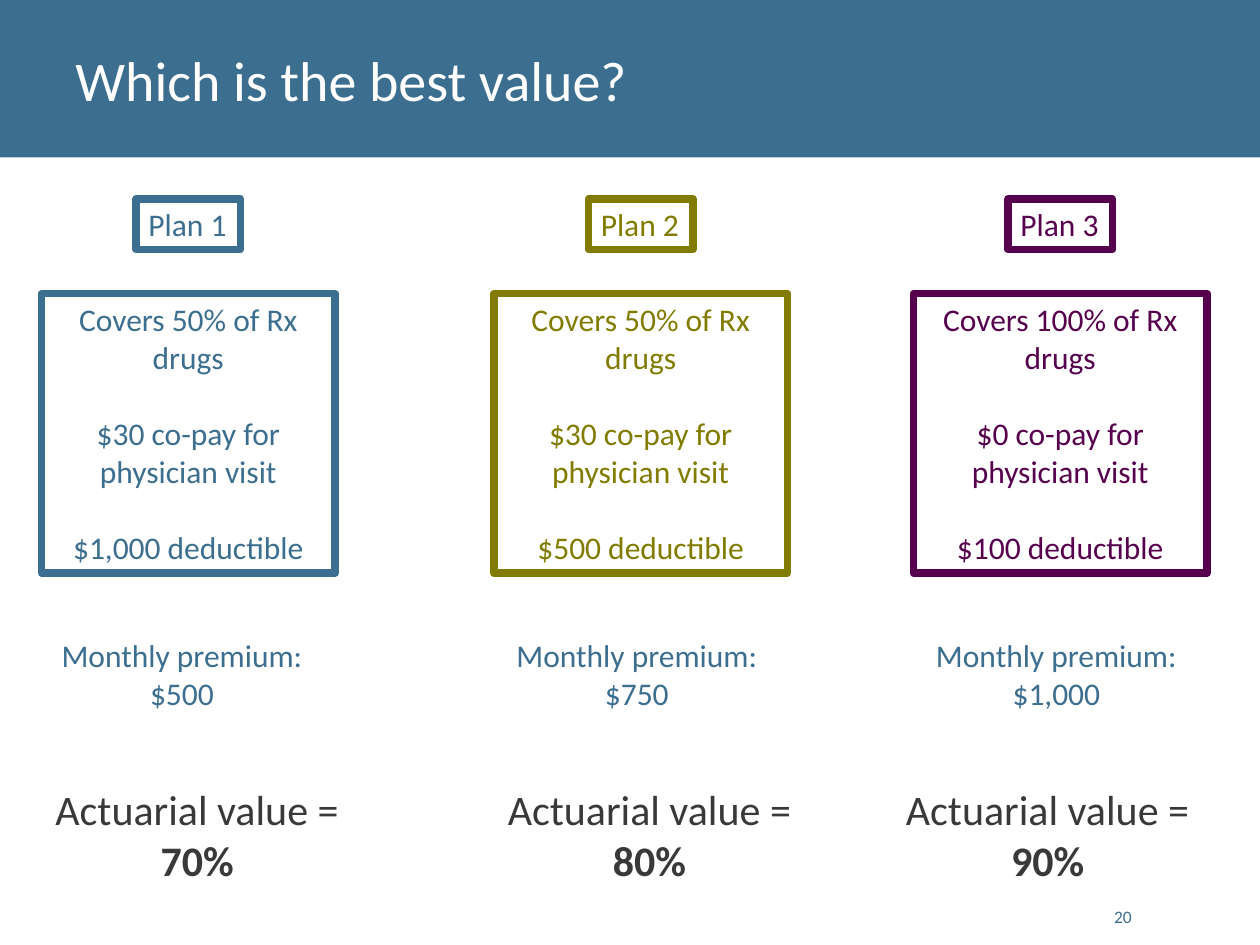
from dataclasses import dataclass

import pptx
import pptx.dml.color
import pptx.enum.shapes
import pptx.enum.text
import pptx.util

Inches = pptx.util.Inches
Pt = pptx.util.Pt
Align = pptx.enum.text.PP_ALIGN
Anchor = pptx.enum.text.MSO_ANCHOR
RECTANGLE = pptx.enum.shapes.MSO_SHAPE.RECTANGLE

COLOURS = {
    "blue": "3B6E8F",
    "olive": "817C00",
    "purple": "56004E",
    "grey": "38393A",
    "white": "FFFFFF",
}


@dataclass
class Line:
    text: str
    align: Align = Align.CENTER
    bold: bool = False


@dataclass
class Plan:
    name: str
    colour: str
    box_left: float
    premium_left: float
    value_left: float
    benefits: tuple[str, ...]
    premium: str
    value: str


PLANS = [
    Plan("Plan 1", "blue", 0.33, 0.39, 0.33,
         ("Covers 50% of Rx drugs", "$30 co-pay for physician visit", "$1,000 deductible"),
         "$500", "70%"),
    Plan("Plan 2", "olive", 3.92, 4, 3.92,
         ("Covers 50% of Rx drugs", "$30 co-pay for physician visit", "$500 deductible"),
         "$750", "80%"),
    Plan("Plan 3", "purple", 7.25, 7.33, 7.08,
         ("Covers 100% of Rx drugs", "$0 co-pay for physician visit", "$100 deductible"),
         "$1,000", "90%"),
]


def rgb(colour: str) -> pptx.dml.color.RGBColor:
    return pptx.dml.color.RGBColor.from_string(COLOURS[colour])


def write(shape, lines: list[Line], size: float, colour: str, wrap: bool = False,
          anchor: Anchor = Anchor.TOP, gap: float = 0) -> None:
    frame = shape.text_frame
    frame.word_wrap = wrap
    frame.vertical_anchor = anchor
    for index, line in enumerate(lines):
        para = frame.add_paragraph() if index else frame.paragraphs[0]
        para.text = line.text
        para.alignment = line.align
        para.space_before = Pt(gap if index else 0)
        para.font.name = "Calibri"
        para.font.size = Pt(size)
        para.font.bold = line.bold
        para.font.color.rgb = rgb(colour)


def add_text(page, left: float, top: float, width: float, height: float):
    return page.shapes.add_textbox(Inches(left), Inches(top), Inches(width), Inches(height))


def add_rectangle(page, left: float, top: float, width: float, height: float,
                  fill: str, outline: str | None = None):
    box = page.shapes.add_shape(RECTANGLE, Inches(left), Inches(top),
                                Inches(width), Inches(height))
    box.shadow.inherit = False
    box.fill.solid()
    box.fill.fore_color.rgb = rgb(fill)
    if outline:
        box.line.color.rgb = rgb(outline)
        box.line.width = Pt(4.33)
    else:
        box.line.fill.background()
    return box


def add_plan(page, plan: Plan) -> None:
    label = add_rectangle(page, plan.box_left + 0.75, 1.58, 0.83, 0.4, "white", plan.colour)
    write(label, [Line(plan.name, Align.LEFT)], 18, plan.colour)

    details = add_rectangle(page, plan.box_left, 2.33, 2.33, 2.22, "white", plan.colour)
    write(details, [Line(benefit) for benefit in plan.benefits], 18, plan.colour,
          wrap=True, gap=22)

    premium = add_text(page, plan.premium_left, 5, 2.19, 0.71)
    write(premium, [Line("Monthly premium:", Align.LEFT), Line(plan.premium)], 18, "blue")

    value = add_text(page, plan.value_left, 6.17, 2.47, 0.91)
    write(value, [Line("Actuarial value ="), Line(plan.value, bold=True)], 24, "grey")


def main() -> None:
    deck = pptx.Presentation()
    deck.slide_width = Inches(10)
    deck.slide_height = Inches(7.5)
    page = deck.slides.add_slide(deck.slide_layouts[6])

    add_rectangle(page, 0, 0, 10, 1.25, "blue")
    title = add_text(page, 0.5, 0, 9, 1.25)
    write(title, [Line("Which is the best value?", Align.LEFT)], 32, "white",
          wrap=True, anchor=Anchor.MIDDLE)

    for plan in PLANS:
        add_plan(page, plan)

    number = add_text(page, 8.68, 7.01, 0.4, 0.4)
    write(number, [Line("20", Align.RIGHT)], 10, "blue", wrap=True, anchor=Anchor.BOTTOM)

    deck.save("out.pptx")


if __name__ == "__main__":
    main()
